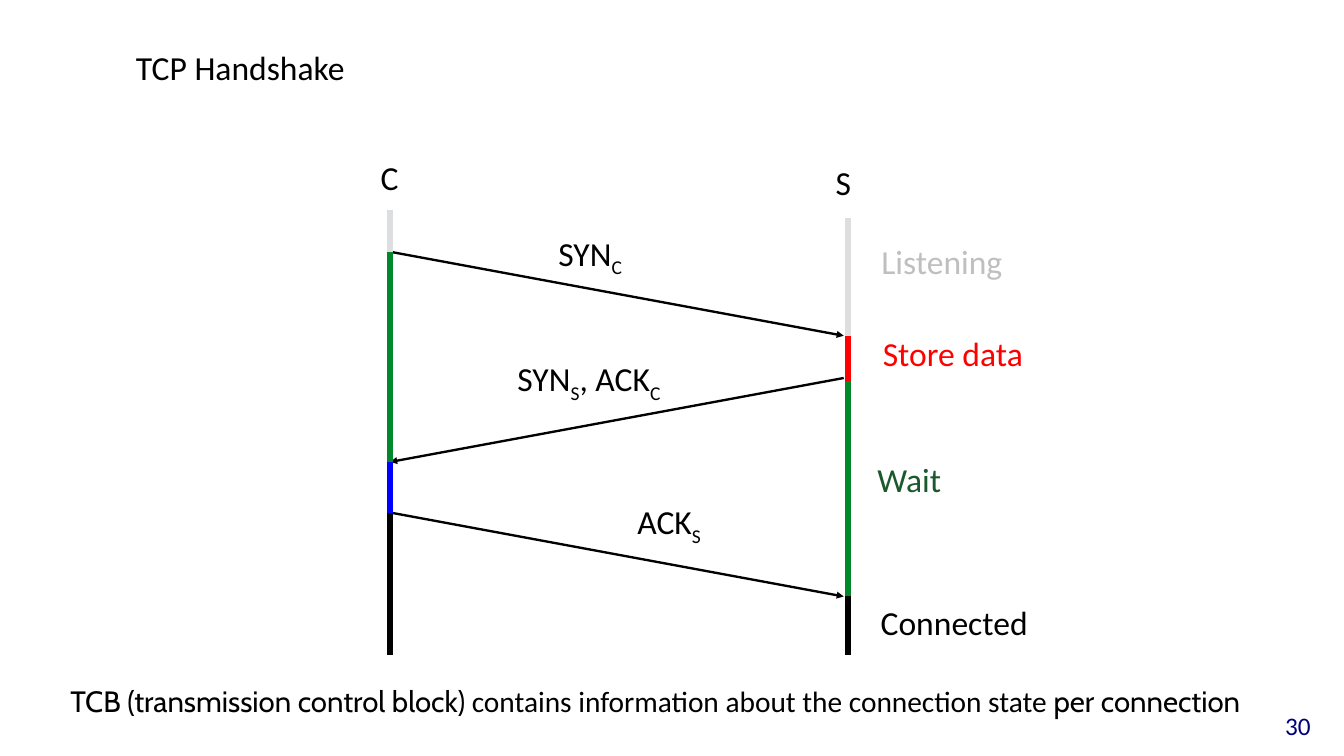
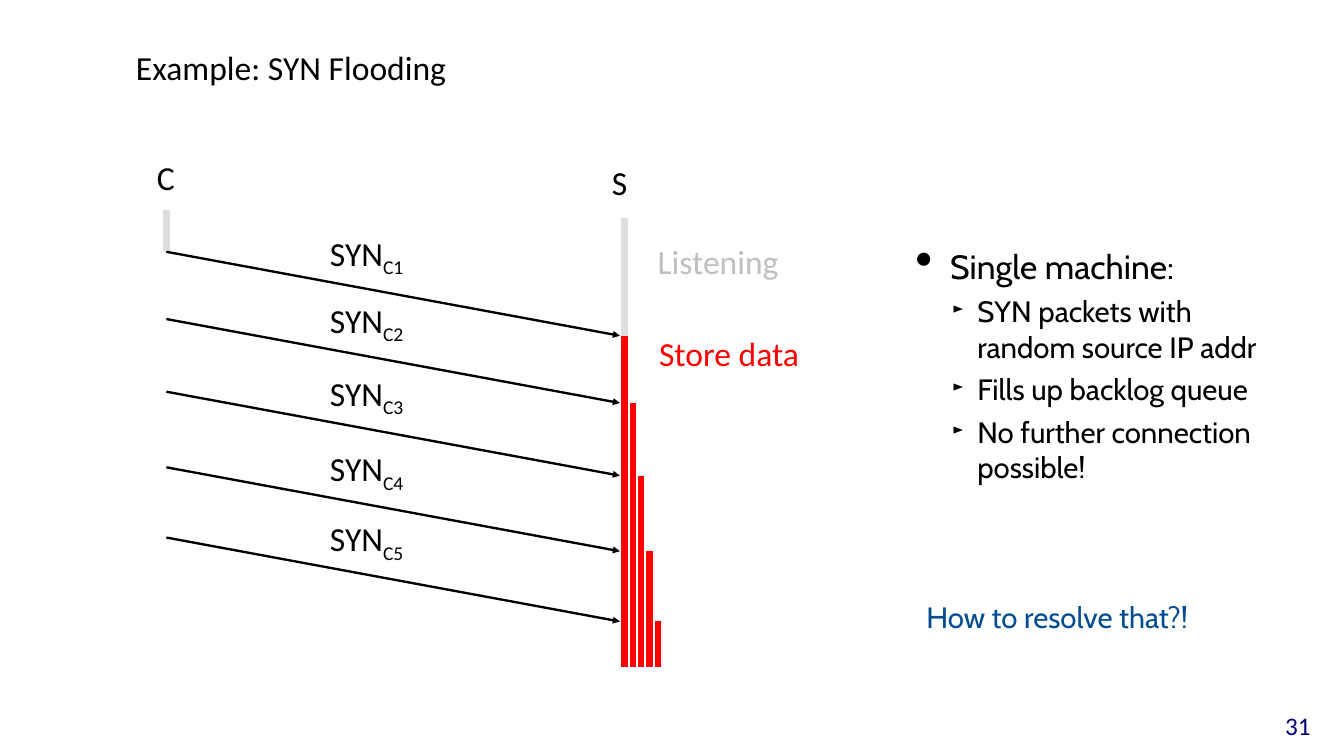
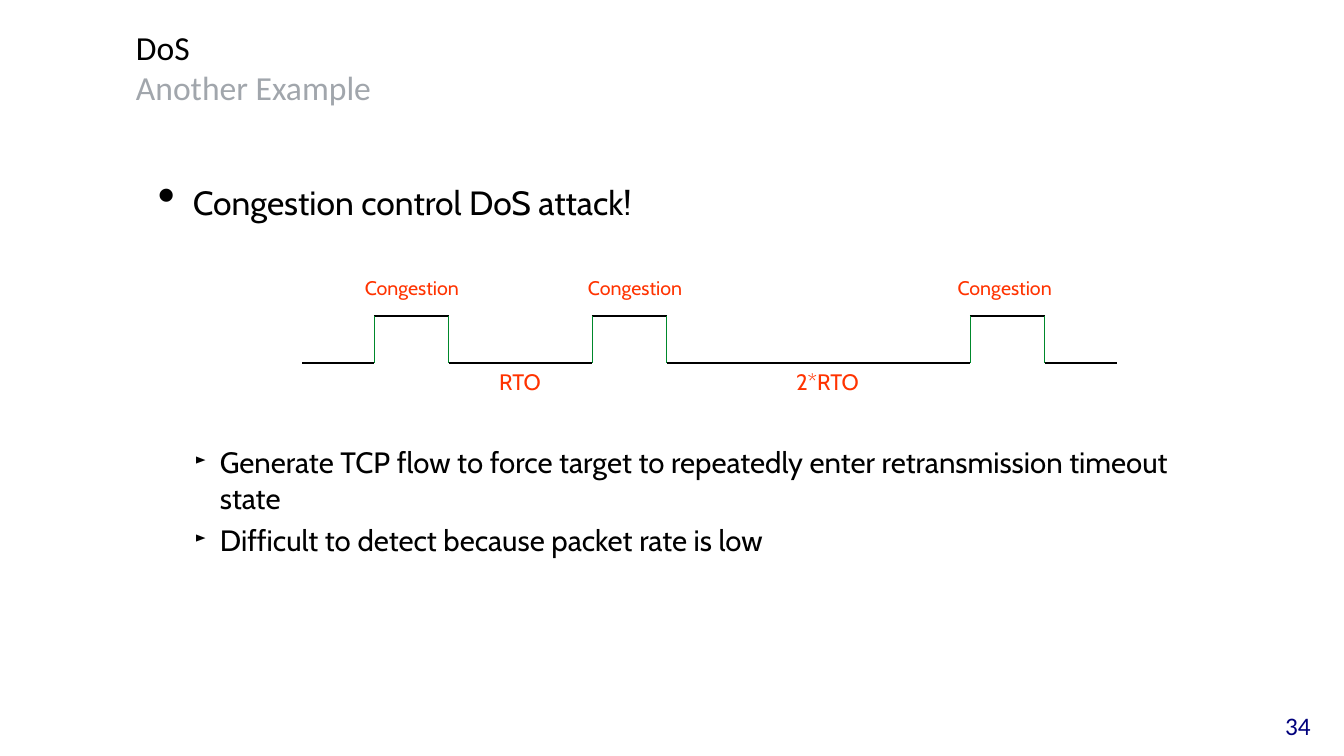
import pptx
import pptx.util
import pptx.dml.color
import pptx.enum.shapes
import pptx.enum.text
import pptx.oxml.ns
import lxml.etree

Cm = pptx.util.Cm
Pt = pptx.util.Pt
RGBColor = pptx.dml.color.RGBColor
Align = pptx.enum.text.PP_ALIGN
Anchor = pptx.enum.text.MSO_ANCHOR

BLACK = RGBColor(0x00, 0x00, 0x00)
NAVY = RGBColor(0x00, 0x00, 0x7C)
GREEN = RGBColor(0x00, 0x88, 0x2B)
FOREST = RGBColor(0x1B, 0x58, 0x2B)
BLUE = RGBColor(0x00, 0x00, 0xFF)
OCEAN = RGBColor(0x02, 0x4C, 0x90)
RED = RGBColor(0xFF, 0x00, 0x00)
ORANGE = RGBColor(0xFF, 0x33, 0x00)
PALE = RGBColor(0xDC, 0xDE, 0xE0)
SILVER = RGBColor(0xBF, 0xBF, 0xBF)
GREY = RGBColor(0xA1, 0xA6, 0xAC)

PLAIN = "Calibri"
ROUND = "Cabin"
REACH = 15.24
DROP = 2.82
SERVER = 15.39
LEVELS = [("•", 150, 2.06, -1.17, 32), ("►", 50, 2.97, -0.84, 28)]


def add_tag(parent, name, **attrs):
    tag = lxml.etree.SubElement(parent, pptx.oxml.ns.qn(name))
    for key, value in attrs.items():
        tag.set(key, str(value))


def style(font, size, color, name):
    font.size, font.name = Pt(size), name
    font.color.rgb = color


def add_frame(slide, left, top, width, height, wrap=True, inset=None):
    shape = slide.shapes.add_textbox(Cm(left), Cm(top), Cm(width), Cm(height))
    frame = shape.text_frame
    frame.word_wrap = wrap
    if inset is not None:
        frame.margin_left = frame.margin_right = Cm(inset)
        frame.margin_top = frame.margin_bottom = Cm(inset)
    return frame


def add_label(slide, parts, left, top, width, height=1.63, color=BLACK,
              size=32, name=PLAIN, wrap=False, inset=None):
    frame = add_frame(slide, left, top, width, height, wrap, inset)
    para = frame.paragraphs[0]
    para.alignment = Align.CENTER
    style(para.font, size, color, name)
    for index, part in enumerate(parts.split("_")):
        run = para.add_run()
        run.text = part
        if index % 2:
            run.font._element.set("baseline", "-25000")


def add_line(slide, start, end, color=BLACK, weight=2.25, arrow=False):
    line = slide.shapes.add_connector(
        pptx.enum.shapes.MSO_CONNECTOR.STRAIGHT,
        Cm(start[0]), Cm(start[1]), Cm(end[0]), Cm(end[1]))
    line.line.color.rgb = color
    line.line.width = Pt(weight)
    if arrow:
        add_tag(line.line._get_or_add_ln(), "a:tailEnd", type="triangle")
    add_tag(line._element.spPr, "a:effectLst")


def add_bars(slide, left, top, bars):
    for start, end, color in bars:
        add_line(slide, (left, top + start), (left, top + end), color, 6)


def add_arrow(slide, left, top, back=False):
    start, end = (REACH, 0) if back else (0, REACH)
    add_line(slide, (left + start, top), (left + end, top + DROP), arrow=True)


def add_body(slide, left, top, width, height, items):
    frame = add_frame(slide, left, top, width, height, inset=0)
    for index, (level, text, gap) in enumerate(items):
        para = frame.add_paragraph() if index else frame.paragraphs[0]
        mark, scale, margin, indent, size = LEVELS[level]
        props = para._p.get_or_add_pPr()
        props.set("marL", str(Cm(margin)))
        props.set("indent", str(Cm(indent)))
        add_tag(props, "a:buSzPct", val=scale * 1000)
        add_tag(props, "a:buChar", char=mark)
        para.level = level
        para.space_before = Pt(gap)
        para.text = text
        style(para.font, size, BLACK, ROUND)


def add_slide(deck, number, title, subtitle=None):
    slide = deck.slides.add_slide(deck.slide_layouts[6])
    add_label(slide, str(number), 43.03, 23.85, 1.17, 1.27, NAVY, 24, inset=0)
    frame = add_frame(slide, 4.42, 0, 36.35, 4.52, inset=0.15)
    frame.vertical_anchor = Anchor.MIDDLE
    para = frame.paragraphs[0]
    para.font.size, para.font.name = Pt(32), PLAIN
    for text, color in ((title, BLACK), (subtitle, GREY)):
        if text:
            if para.runs:
                para.add_line_break()
            run = para.add_run()
            run.text = text
            run.font.color.rgb = color
    return slide


def add_peers(slide, left, top):
    add_bars(slide, left, top, [(0, 1.4, PALE)])
    add_bars(slide, left + SERVER, top, [(0.28, 4.22, PALE)])
    add_label(slide, "C", left - 0.58, top - 1.9, 1.12)
    add_label(slide, "S", left + 14.71, top - 1.73, 1.04)
    add_label(slide, "Listening", left + 16.23, top + 0.91, 4.62, color=SILVER)
    add_label(slide, "Store data", left + 16.27, top + 4.01, 5.28, color=RED)


def add_shake(slide, left, top):
    for start, back in ((1.4, False), (10.16, False), (5.64, True)):
        add_arrow(slide, left, top + start, back)
    add_peers(slide, left, top)
    add_bars(slide, left, top, [
        (1.4, 8.46, GREEN), (10.16, 14.96, BLACK), (8.46, 10.16, BLUE)])
    add_bars(slide, left + SERVER, top, [
        (5.64, 12.98, GREEN), (12.98, 14.96, BLACK), (4.22, 5.74, RED)])
    for text, across, down, width, color in (
            ("SYN_C", 5.36, 0.63, 2.72, BLACK),
            ("SYN_S_, ACK_C", 3.96, 4.85, 5.44, BLACK),
            ("ACK_S", 8.03, 9.65, 2.69, BLACK),
            ("Wait", 16.1, 8.25, 2.69, FOREST),
            ("Connected", 16.2, 13.03, 5.51, BLACK)):
        add_label(slide, text, left + across, top + down, width, color=color)


def add_flood(slide, left, top):
    add_peers(slide, left, top)
    for index, start in enumerate((1.4, 3.66, 6.1, 8.64, 11)):
        add_arrow(slide, left, top + start)
        add_label(slide, f"SYN_C{index + 1}", left + 5.18, top + start - 0.77, 3.1)
        add_bars(slide, left + SERVER + 0.28 * index, top,
                 [(start + DROP, 15.34, RED)])


def add_wave(slide, left, top):
    span, rise = 2.51, 1.57
    low = left
    for edge, shift in ((2.41, 1.8), (9.73, 9.3), (22.43, 21.72)):
        begin = left + edge
        end = begin + span
        add_line(slide, (low, top), (begin, top))
        add_line(slide, (begin, top - rise), (end, top - rise))
        for side in (begin, end):
            add_line(slide, (side, top - rise), (side, top), GREEN, 0.75)
        add_label(slide, "Congestion", left + shift, top - 3.06, 3.76, 1.07,
                  ORANGE, 18.7, ROUND)
        low = end
    add_line(slide, (low, top), (left + 27.38, top))
    for text, shift, width in (("RTO", 6.35, 1.93), ("2*RTO", 16.26, 2.77)):
        add_label(slide, text, left + shift, top + 0.05, width, 1.17,
                  ORANGE, 21.3, ROUND)


def add_note(slide, left, top, width):
    para = add_frame(slide, left, top, width, 1.45).paragraphs[0]
    para.alignment = Align.CENTER
    for text, name in (
            ("TCB (transmission control block) ", ROUND),
            ("contains information about the connection state ", PLAIN),
            ("per connection", ROUND)):
        run = para.add_run()
        run.text = text
        style(run.font, 28, BLACK, name)


def main():
    deck = pptx.Presentation()
    deck.slide_width, deck.slide_height = Cm(45.16), Cm(25.4)

    slide = add_slide(deck, 30, "TCP Handshake")
    add_shake(slide, 13.11, 7.06)
    add_note(slide, 0.97, 22.83, 42.09)

    slide = add_slide(deck, 31, "Example: SYN Flooding")
    add_body(slide, 29.87, 8.26, 13.16, 1.5, [
        (0, "Single machine:", 7),
        (1, "SYN packets with random source IP addr", 7),
        (1, "Fills up backlog queue", 7),
        (1, "No further connection possible!", 7)])
    add_flood(slide, 5.59, 7.06)
    add_label(slide, "How to resolve that?!", 29.87, 20.02, 11.3, 1.45,
              OCEAN, 28, ROUND, wrap=True)

    slide = add_slide(deck, 34, "DoS", "Another Example")
    add_body(slide, 4.42, 6.1, 36.35, 15.98, [
        (0, "Congestion control DoS attack!", 7),
        (1, "Generate TCP flow to force target to repeatedly enter "
            "retransmission timeout state", 212),
        (1, "Difficult to detect because packet rate is low", 7)])
    add_wave(slide, 10.16, 12.19)

    deck.save("out.pptx")


if __name__ == "__main__":
    main()
